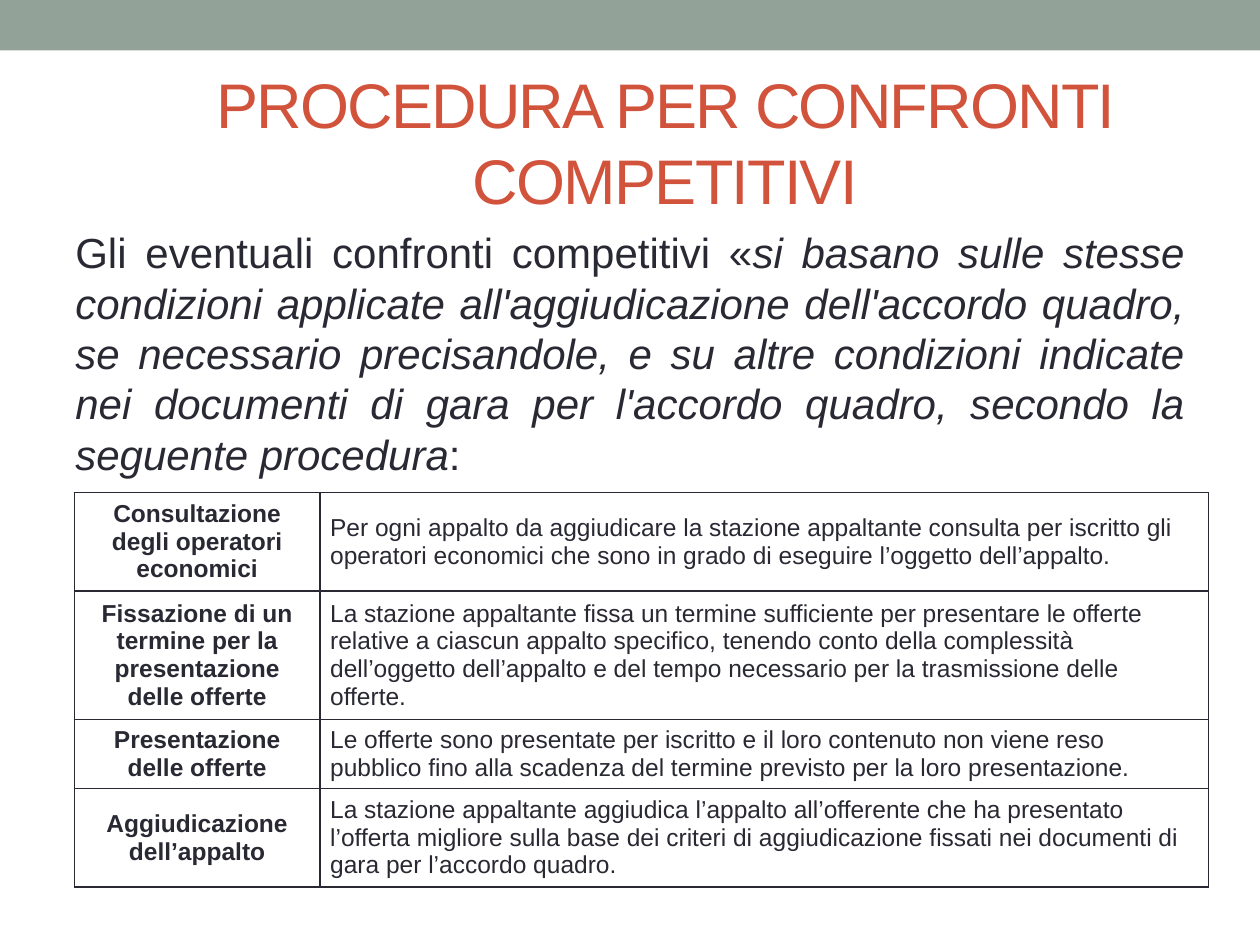
import pptx
import pptx.util
import pptx.dml.color
import pptx.enum.shapes
import pptx.enum.text
import pptx.oxml
import pptx.oxml.ns

Inches = pptx.util.Inches
Pt = pptx.util.Pt
Align = pptx.enum.text.PP_ALIGN
Anchor = pptx.enum.text.MSO_ANCHOR
COLORS = {"band": "93A299", "title": "D2533C", "ink": "292934", "paper": "FFFFFF"}

STEPS = [
    ("Consultazione degli operatori economici",
     "Per ogni appalto da aggiudicare la stazione appaltante consulta per iscritto gli "
     "operatori economici che sono in grado di eseguire l’oggetto dell’appalto.", 0.55),
    ("Fissazione di un termine per la presentazione delle offerte",
     "La stazione appaltante fissa un termine sufficiente per presentare le offerte relative "
     "a ciascun appalto specifico, tenendo conto della complessità dell’oggetto dell’appalto "
     "e del tempo necessario per la trasmissione delle offerte.", 1.02),
    ("Presentazione delle offerte",
     "Le offerte sono presentate per iscritto e il loro contenuto non viene reso pubblico "
     "fino alla scadenza del termine previsto per la loro presentazione.", 0.55),
    ("Aggiudicazione dell’appalto",
     "La stazione appaltante aggiudica l’appalto all’offerente che ha presentato l’offerta "
     "migliore sulla base dei criteri di aggiudicazione fissati nei documenti di gara per "
     "l’accordo quadro.", 0.78),
]

QUOTE = ("si basano sulle stesse condizioni applicate all'aggiudicazione dell'accordo quadro, "
         "se necessario precisandole, e su altre condizioni indicate nei documenti di gara per "
         "l'accordo quadro, secondo la seguente procedura")


def shade(name):
    return pptx.dml.color.RGBColor.from_string(COLORS[name])


def add_text(para, text, size=14, color="ink", bold=False, italic=False, track=0):
    run = para.add_run()
    run.text = text
    font = run.font
    font.name = "Arial"
    font.size = Pt(size)
    font.bold = bold
    font.italic = italic
    font.color.rgb = shade(color)
    if track:
        run._r.get_or_add_rPr().set("spc", str(track * 100))


class Deck:
    def __init__(self, show):
        self.slide = show.slides.add_slide(show.slide_layouts[6])
        self.shapes = self.slide.shapes
        fill = self.slide.background.fill
        fill.solid()
        fill.fore_color.rgb = shade("paper")

    def band(self, left, top, width, height):
        kind = pptx.enum.shapes.MSO_SHAPE.RECTANGLE
        shape = self.shapes.add_shape(
            kind, Inches(left), Inches(top), Inches(width), Inches(height))
        shape.shadow.inherit = False
        shape.fill.solid()
        shape.fill.fore_color.rgb = shade("band")
        shape.line.fill.background()

    def text(self, left, top, width, height, align, anchor):
        box = self.shapes.add_textbox(
            Inches(left), Inches(top), Inches(width), Inches(height))
        frame = box.text_frame
        frame.word_wrap = True
        frame.vertical_anchor = anchor
        para = frame.paragraphs[0]
        para.alignment = align
        return para

    def edge(self, cell):
        props = cell._tc.get_or_add_tcPr()
        for spot, side in enumerate(("lnL", "lnR", "lnT", "lnB")):
            line = pptx.oxml.parse_xml(
                f'<a:{side} {pptx.oxml.ns.nsdecls("a")} w="12700"><a:solidFill>'
                f'<a:srgbClr val="{COLORS["ink"]}"/></a:solidFill></a:{side}>')
            props.insert(spot, line)

    def cell(self, cell, text, head):
        cell.margin_left = cell.margin_right = Inches(0.08)
        cell.margin_top = cell.margin_bottom = Inches(0.04)
        cell.vertical_anchor = Anchor.MIDDLE
        cell.fill.solid()
        cell.fill.fore_color.rgb = shade("paper")
        para = cell.text_frame.paragraphs[0]
        para.alignment = Align.CENTER if head else Align.LEFT
        add_text(para, text, bold=head)
        self.edge(cell)

    def table(self, left, top, widths, steps):
        high = sum(step[2] for step in steps)
        grid = self.shapes.add_table(
            len(steps), len(widths), Inches(left), Inches(top),
            Inches(sum(widths)), Inches(high)).table
        grid.first_row = grid.horz_banding = False
        for col, width in zip(grid.columns, widths):
            col.width = Inches(width)
        for row, (name, note, height) in zip(grid.rows, steps):
            row.height = Inches(height)
            self.cell(row.cells[0], name, True)
            self.cell(row.cells[1], note, False)


def main():
    show = pptx.Presentation()
    show.slide_width, show.slide_height = Inches(10), Inches(7.5)
    deck = Deck(show)
    deck.band(0, 0, 10, 0.4)
    title = deck.text(0.12, 0.58, 10.32, 1.08, Align.CENTER, Anchor.MIDDLE)
    add_text(title, "PROCEDURA PER CONFRONTI COMPETITIVI", size=36, color="title", track=-1)
    body = deck.text(0.5, 1.75, 9, 5.33, Align.JUSTIFY, Anchor.TOP)
    add_text(body, "Gli eventuali confronti competitivi «", size=24)
    add_text(body, QUOTE, size=24, italic=True)
    add_text(body, ":", size=24)
    deck.table(0.59, 3.91, (1.95, 7.05), STEPS)
    show.save("out.pptx")


if __name__ == "__main__":
    main()
